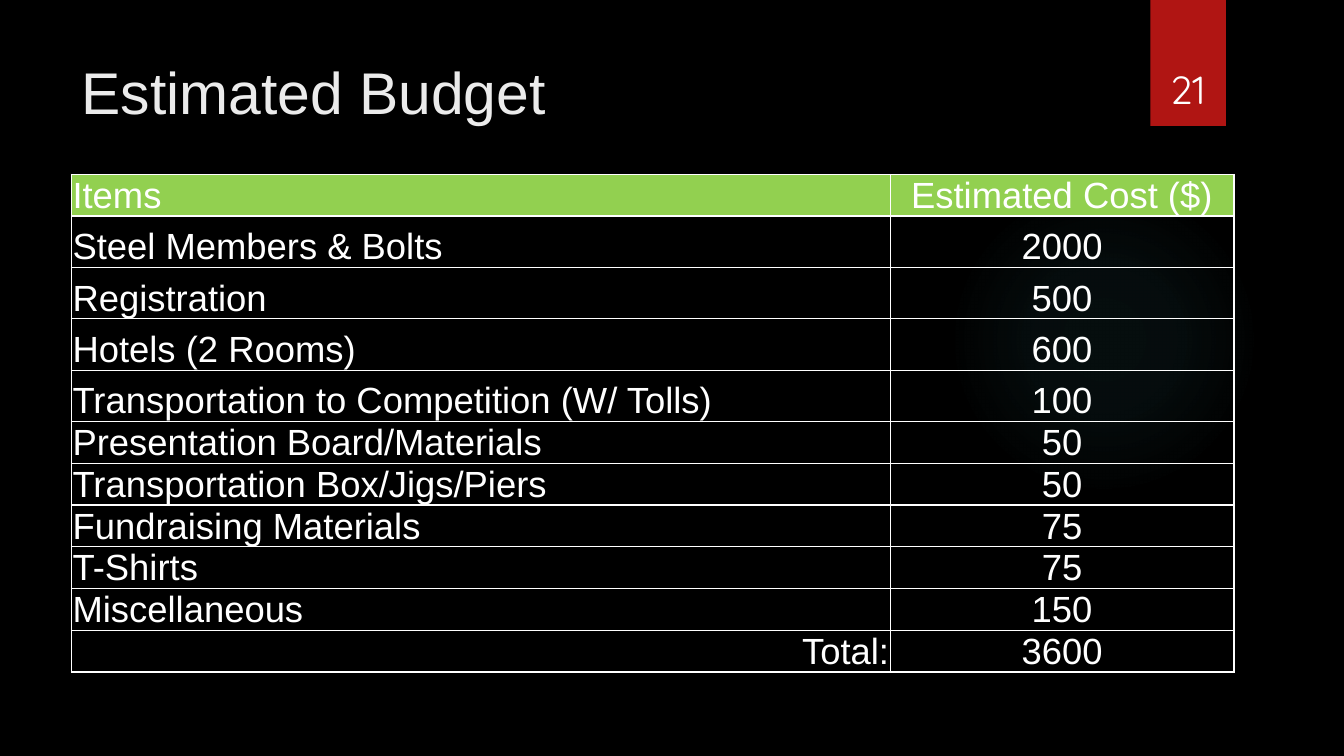
"""Build the estimated budget slide."""
from dataclasses import dataclass

from pptx import Presentation
from pptx.dml.color import RGBColor
from pptx.enum.shapes import MSO_SHAPE
from pptx.enum.text import MSO_ANCHOR, PP_ALIGN
from pptx.oxml import parse_xml
from pptx.util import Inches, Pt

LEFT, MID, RIGHT = PP_ALIGN.LEFT, PP_ALIGN.CENTER, PP_ALIGN.RIGHT
TOP, BOTTOM = MSO_ANCHOR.TOP, MSO_ANCHOR.BOTTOM
OVAL, RECT = MSO_SHAPE.OVAL, MSO_SHAPE.RECTANGLE
NS = 'xmlns:a="http://schemas.openxmlformats.org/drawingml/2006/main"'
WHITE, GREEN, RED, GLOW = "FFFFFF", "92D050", "B01513", "50B9C1"


@dataclass
class Label:
    text: str
    box: tuple
    size: int
    font: str
    color: str
    align: int
    anchor: int


@dataclass
class Row:
    item: str
    cost: str
    height: float = 0.39
    align: int = LEFT
    fill: str = ""


LABELS = [
    Label("Estimated Budget", (0.71, 0.5, 10.29, 1.53), 42, "Arial", "EBEBEB", LEFT, TOP),
    Label("21", (11.32, 0.32, 0.92, 0.84), 28, "Quicksand", WHITE, MID, BOTTOM),
]
ROWS = [
    Row("Items", "Estimated Cost ($)", 0.35, fill=GREEN),
    Row("Steel Members & Bolts", "2000", 0.51),
    Row("Registration", "500", 0.51),
    Row("Hotels (2 Rooms)", "600", 0.51),
    Row("Transportation to Competition (W/ Tolls)", "100", 0.51),
    Row("Presentation Board/Materials", "50"),
    Row("Transportation Box/Jigs/Piers", "50"),
    Row("Fundraising Materials", "75"),
    Row("T-Shirts", "75"),
    Row("Miscellaneous", "150"),
    Row("Total:", "3600", align=RIGHT),
]
COLS = (8.12, 3.41)


def paint(fill, color: str) -> None:
    fill.solid()
    fill.fore_color.rgb = RGBColor.from_string(color)


def style(para, size: int, font: str, color: str, align: int) -> None:
    para.alignment = align
    para.font.size = Pt(size)
    para.font.name = font
    para.font.color.rgb = RGBColor.from_string(color)


def add_form(slide, kind: int, box: tuple):
    form = slide.shapes.add_shape(kind, *map(Inches, box))
    form.shadow.inherit = False
    form.line.fill.background()
    return form


def add_glow(slide) -> None:
    form = add_form(slide, OVAL, (9.41, 1.83, 3.08, 3.08))
    form.fill.background()
    stops = "".join(
        f'<a:gs pos="{pos * 1000}"><a:srgbClr val="{GLOW}">'
        f'<a:alpha val="{alpha * 1000}"/></a:srgbClr></a:gs>'
        for pos, alpha in ((0, 7), (36, 6), (69, 0)))
    grad = parse_xml(
        f'<a:gradFill {NS}><a:gsLst>{stops}</a:gsLst><a:path path="circle">'
        '<a:fillToRect l="50000" t="50000" r="50000" b="50000"/></a:path></a:gradFill>')
    props = form.fill._xPr
    props.replace(props.find("{*}noFill"), grad)


def add_label(slide, label: Label) -> None:
    frame = slide.shapes.add_textbox(*map(Inches, label.box)).text_frame
    frame.word_wrap = True
    frame.vertical_anchor = label.anchor
    para = frame.paragraphs[0]
    para.text = label.text
    style(para, label.size, label.font, label.color, label.align)


def fill_cell(cell, text: str, align: int, fill: str) -> None:
    cell.text = text
    cell.vertical_anchor = BOTTOM
    cell.margin_left = cell.margin_right = cell.margin_top = Inches(0.01)
    cell.margin_bottom = 0
    style(cell.text_frame.paragraphs[0], 26, "Arial", WHITE, align)
    props = cell._tc.get_or_add_tcPr()
    for side in "LRTB":
        props.append(parse_xml(
            f'<a:ln{side} {NS} w="{Pt(1)}"><a:solidFill><a:srgbClr val="{WHITE}"/>'
            f'</a:solidFill></a:ln{side}>'))
    if fill:
        paint(cell.fill, fill)
    else:
        cell.fill.background()


def add_budget(slide) -> None:
    high = sum(row.height for row in ROWS)
    box = map(Inches, (0.71, 1.73, sum(COLS), high))
    table = slide.shapes.add_table(len(ROWS), len(COLS), *box).table
    table.first_row = table.horz_banding = False
    for col, width in zip(table.columns, COLS):
        col.width = Inches(width)
    for num, row in enumerate(ROWS):
        table.rows[num].height = Inches(row.height)
        fill_cell(table.cell(num, 0), row.item, row.align, row.fill)
        fill_cell(table.cell(num, 1), row.cost, MID, row.fill)


def main() -> None:
    deck = Presentation()
    deck.slide_width, deck.slide_height = Inches(13.33), Inches(7.5)
    slide = deck.slides.add_slide(deck.slide_layouts[6])
    paint(slide.background.fill, "000000")
    add_glow(slide)
    paint(add_form(slide, RECT, (11.41, 0, 0.75, 1.25)).fill, RED)
    add_budget(slide)
    for label in LABELS:
        add_label(slide, label)
    deck.save("out.pptx")


if __name__ == "__main__":
    main()
